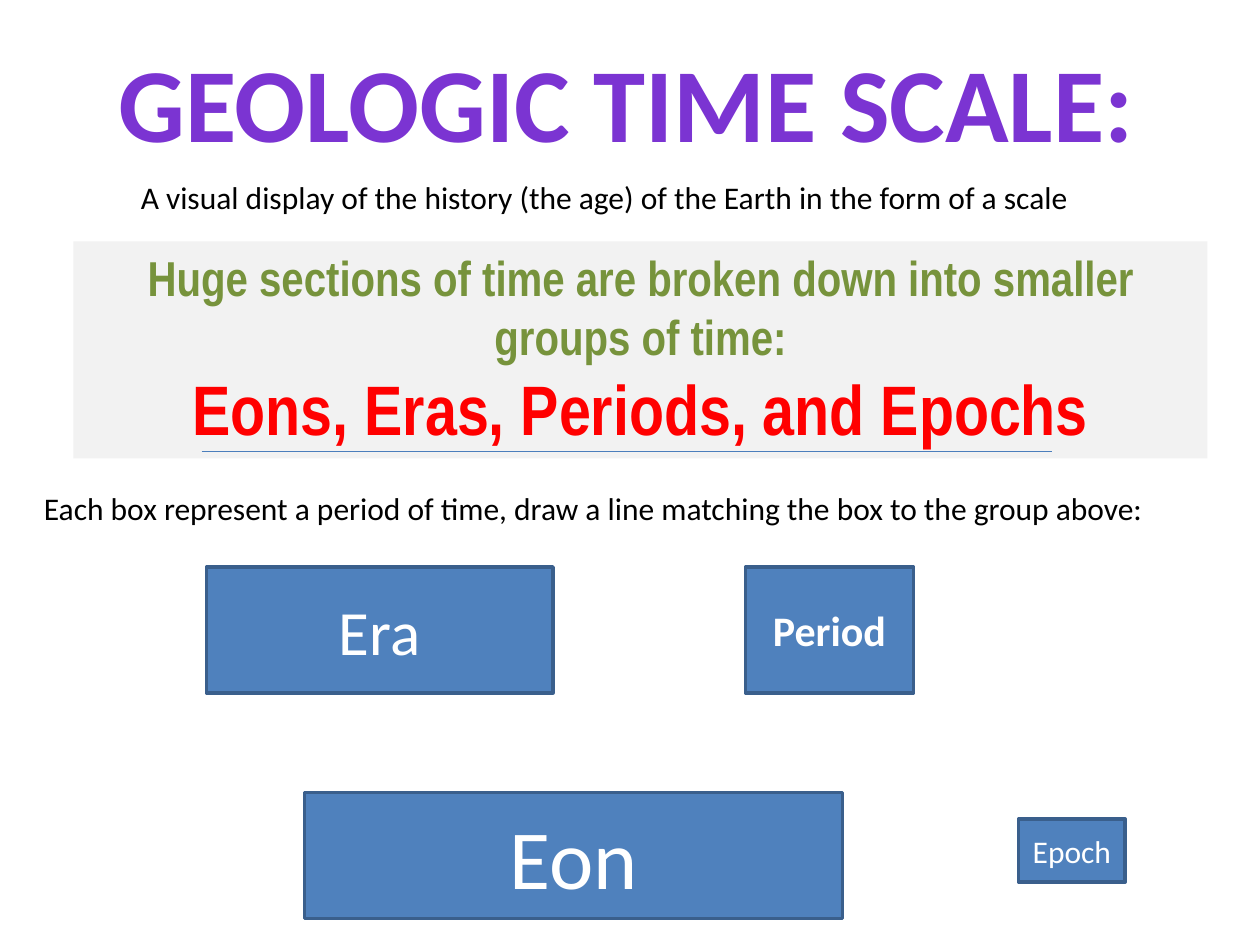
from pptx import Presentation
from pptx.dml.color import RGBColor
from pptx.enum.shapes import MSO_CONNECTOR, MSO_SHAPE
from pptx.enum.text import MSO_ANCHOR, MSO_AUTO_SIZE, PP_ALIGN
from pptx.oxml.ns import qn
from pptx.util import Pt
from lxml.etree import SubElement

# Content: (text, size, colour, bold); frames are left, top, width, height in points
TITLE = ("GEOLOGIC TIME SCALE:", 60, "7B34D2", True)
TITLE_FRAME = (57.6, 18, 600.5, 80)

BANNER = [
    ("Huge sections of time are broken down into smaller groups of time:",
     28, "77933C", True),
    ("Eons, Eras, Periods, and Epochs", 40, "FF0000", True),
]
BANNER_FRAME = (42, 138, 648, 124)
UNDERLINE = (115.2, 258, 601.2, 258)

CAPTIONS = [
    ("A visual display of the history (the age) of the Earth in the form of a scale",
     (73.4, 98, 570, 29)),
    ("Each box represent a period of time, draw a line matching the box to the group above:",
     (18, 276, 726, 29)),
]

TIME_BOXES = [
    ("Eon", 48, False, (174, 453, 307.5, 72)),
    ("Era", 36, False, (118, 324, 198, 72)),
    ("Period", 24, True, (426, 324, 96, 72)),
    ("Epoch", 18, False, (582, 468, 61, 36)),
]


def rgb(value):
    return RGBColor.from_string(value)


def points(values):
    return [Pt(value) for value in values]


def write(frame, lines, font="Calibri", align=PP_ALIGN.CENTER,
          anchor=MSO_ANCHOR.TOP, wrap=True):
    frame.text = "\n".join(line[0] for line in lines)
    frame.auto_size = MSO_AUTO_SIZE.NONE
    frame.word_wrap = wrap
    frame.vertical_anchor = anchor
    for paragraph, (_, size, color, bold) in zip(frame.paragraphs, lines):
        paragraph.alignment = align
        for run in paragraph.runs:
            run.font.name = font
            run.font.size = Pt(size)
            run.font.bold = bold
            run.font.color.rgb = rgb(color)


def add_box(slide, frame, fill, outline=None):
    box = slide.shapes.add_shape(MSO_SHAPE.RECTANGLE, *points(frame))
    box.shadow.inherit = False
    box.fill.solid()
    box.fill.fore_color.rgb = rgb(fill)
    if outline:
        box.line.color.rgb = rgb(outline)
        box.line.width = Pt(2)
    else:
        box.line.fill.background()
    return box


def main():
    deck = Presentation()
    deck.slide_width, deck.slide_height = Pt(720), Pt(540)
    slide = deck.slides.add_slide(deck.slide_layouts[5])

    # Title
    title = slide.shapes.title
    title.left, title.top, title.width, title.height = points(TITLE_FRAME)
    write(title.text_frame, [TITLE], wrap=False)

    # Banner with its underline
    banner = add_box(slide, BANNER_FRAME, "F2F2F2")
    write(banner.text_frame, BANNER, font="Arial Narrow")
    underline = slide.shapes.add_connector(MSO_CONNECTOR.STRAIGHT, *points(UNDERLINE))
    underline.line.color.rgb = rgb("4B7EBC")
    underline.line.width = Pt(0.75)
    SubElement(underline._element.spPr, qn("a:effectLst"))

    # Captions
    for text, frame in CAPTIONS:
        caption = slide.shapes.add_textbox(*points(frame))
        write(caption.text_frame, [(text, 18, "000000", False)], align=PP_ALIGN.LEFT)

    # Boxes to match with the groups
    for text, size, bold, frame in TIME_BOXES:
        box = add_box(slide, frame, "4F81BD", "3A5F8C")
        write(box.text_frame, [(text, size, "FFFFFF", bold)], anchor=MSO_ANCHOR.MIDDLE)

    deck.save("out.pptx")


if __name__ == "__main__":
    main()
